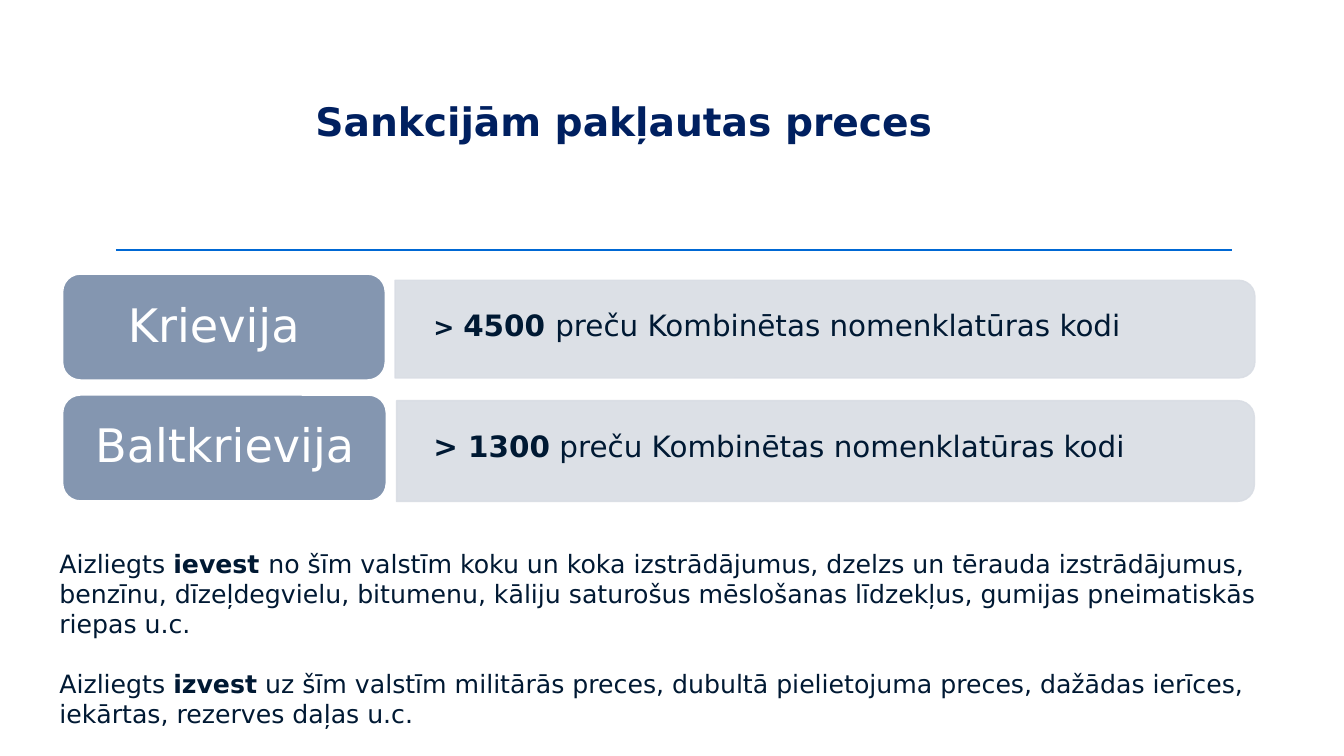
from dataclasses import dataclass

from lxml import etree
from pptx import Presentation
from pptx.dml.color import RGBColor
from pptx.enum.shapes import MSO_CONNECTOR, MSO_SHAPE
from pptx.enum.text import MSO_ANCHOR as Anchor, PP_ALIGN as Align
from pptx.oxml.ns import qn
from pptx.shapes.autoshape import Shape
from pptx.slide import Slide
from pptx.util import Pt

FONT = "DejaVu Sans"
NAVY = RGBColor(0x00, 0x20, 0x60)
INK = RGBColor(0x00, 0x19, 0x33)
RULE_BLUE = RGBColor(0x00, 0x68, 0xD4)
TAG_BLUE = RGBColor(0x84, 0x96, 0xB0)
BAR_GREY = RGBColor(0xD9, 0xDD, 0xE4)
WHITE = RGBColor(0xFF, 0xFF, 0xFF)


@dataclass(frozen=True)
class Area:
    left: float
    top: float
    width: float
    height: float


@dataclass(frozen=True)
class Span:
    text: str
    size: float
    bold: bool = False


@dataclass(frozen=True)
class Style:
    color: RGBColor
    align: Align = Align.LEFT
    anchor: Anchor = Anchor.MIDDLE
    side_inset: float = 7.2
    end_inset: float = 3.6
    line_spacing: float = 0.9
    gap: float = 0


@dataclass(frozen=True)
class Country:
    name: str
    tag: Area
    name_area: Area
    bar: Area
    count_area: Area
    count: list[Span]


TITLE_STYLE = Style(NAVY, Align.CENTER, Anchor.BOTTOM)
NAME_STYLE = Style(WHITE, Align.CENTER, side_inset=10, end_inset=5)
COUNT_STYLE = Style(INK, side_inset=6.5, end_inset=3)
BAN_STYLE = Style(INK, anchor=Anchor.TOP, line_spacing=1, gap=21)

CODES = "preču Kombinētas nomenklatūras kodi"
COUNTRIES = [
    Country(
        "Krievija",
        Area(44.8, 195.8, 230.4, 75.6),
        Area(44.8, 212.4, 216, 42.5),
        Area(282.2, 200.2, 614.2, 69.8),
        Area(303.1, 202.3, 588.2, 62.6),
        [Span("> ", 18, True), Span("4500 ", 21, True), Span(CODES, 21)],
    ),
    Country(
        "Baltkrievija",
        Area(44.8, 282.2, 231.1, 75.6),
        Area(52.6, 285.8, 216, 68.4),
        Area(283.3, 286.2, 612.7, 72),
        Area(303.1, 303.8, 604.8, 32.4),
        [Span("> 1300", 21, True), Span(" " + CODES, 21)],
    ),
]
BANS = [
    [
        Span("Aizliegts ", 18),
        Span("ievest ", 18, True),
        Span(
            "no šīm valstīm koku un koka izstrādājumus, dzelzs un tērauda "
            "izstrādājumus, benzīnu, dīzeļdegvielu, bitumenu, kāliju saturošus "
            "mēslošanas līdzekļus, gumijas pneimatiskās riepas u.c.", 18),
    ],
    [
        Span("Aizliegts ", 18),
        Span("izvest", 18, True),
        Span(
            " uz šīm valstīm militārās preces, dubultā pielietojuma preces, "
            "dažādas ierīces, iekārtas, rezerves daļas u.c.", 18),
    ],
]


def add_text(page: Slide, area: Area, paragraphs: list[list[Span]], style: Style) -> None:
    box = page.shapes.add_textbox(
        Pt(area.left), Pt(area.top), Pt(area.width), Pt(area.height))
    frame = box.text_frame
    frame.word_wrap = True
    frame.vertical_anchor = style.anchor
    frame.margin_left = frame.margin_right = Pt(style.side_inset)
    frame.margin_top = frame.margin_bottom = Pt(style.end_inset)
    for index, spans in enumerate(paragraphs):
        para = frame.add_paragraph() if index else frame.paragraphs[0]
        para.alignment = style.align
        para.line_spacing = style.line_spacing
        if index:
            para.space_before = Pt(style.gap)
        para.font.name = FONT
        para.font.color.rgb = style.color
        for span in spans:
            run = para.add_run()
            run.text = span.text
            run.font.size = Pt(span.size)
            run.font.bold = span.bold


def add_block(page: Slide, kind: MSO_SHAPE, area: Area, fill: RGBColor, line: RGBColor) -> Shape:
    block = page.shapes.add_shape(
        kind, Pt(area.left), Pt(area.top), Pt(area.width), Pt(area.height))
    block.shadow.inherit = False
    block.fill.solid()
    block.fill.fore_color.rgb = fill
    block.line.color.rgb = line
    block.line.width = Pt(1)
    return block


def add_bar(page: Slide, area: Area) -> None:
    shift = (area.width - area.height) / 2
    upright = Area(area.left + shift, area.top - shift, area.height, area.width)
    bar = add_block(page, MSO_SHAPE.ROUND_2_SAME_RECTANGLE, upright, BAR_GREY, BAR_GREY)
    bar.rotation = 90
    for color in bar.element.spPr.iter(qn("a:srgbClr")):
        etree.SubElement(color, qn("a:alpha"), val="90000")


def add_rule(page: Slide, left: float, right: float, top: float) -> None:
    rule = page.shapes.add_connector(
        MSO_CONNECTOR.STRAIGHT, Pt(left), Pt(top), Pt(right), Pt(top))
    rule.line.color.rgb = RULE_BLUE
    rule.line.width = Pt(1.25)
    etree.SubElement(rule.element.spPr, qn("a:effectLst"))


def add_country(page: Slide, country: Country) -> None:
    add_bar(page, country.bar)
    add_text(page, country.count_area, [country.count], COUNT_STYLE)
    add_block(page, MSO_SHAPE.ROUNDED_RECTANGLE, country.tag, TAG_BLUE, WHITE)
    add_text(page, country.name_area, [[Span(country.name, 33)]], NAME_STYLE)


def main() -> None:
    deck = Presentation()
    deck.slide_width, deck.slide_height = Pt(960), Pt(540)
    page = deck.slides.add_slide(deck.slide_layouts[6])
    add_rule(page, 82.8, 879.8, 178.6)
    title = [Span("Sankcijām pakļautas preces ", 28, True)]
    add_text(page, Area(61.2, 31.7, 778.3, 75.6), [title], TITLE_STYLE)
    for country in COUNTRIES:
        add_country(page, country)
    add_text(page, Area(35.3, 388.1, 891.4, 138.2), BANS, BAN_STYLE)
    deck.save("out.pptx")


if __name__ == "__main__":
    main()
